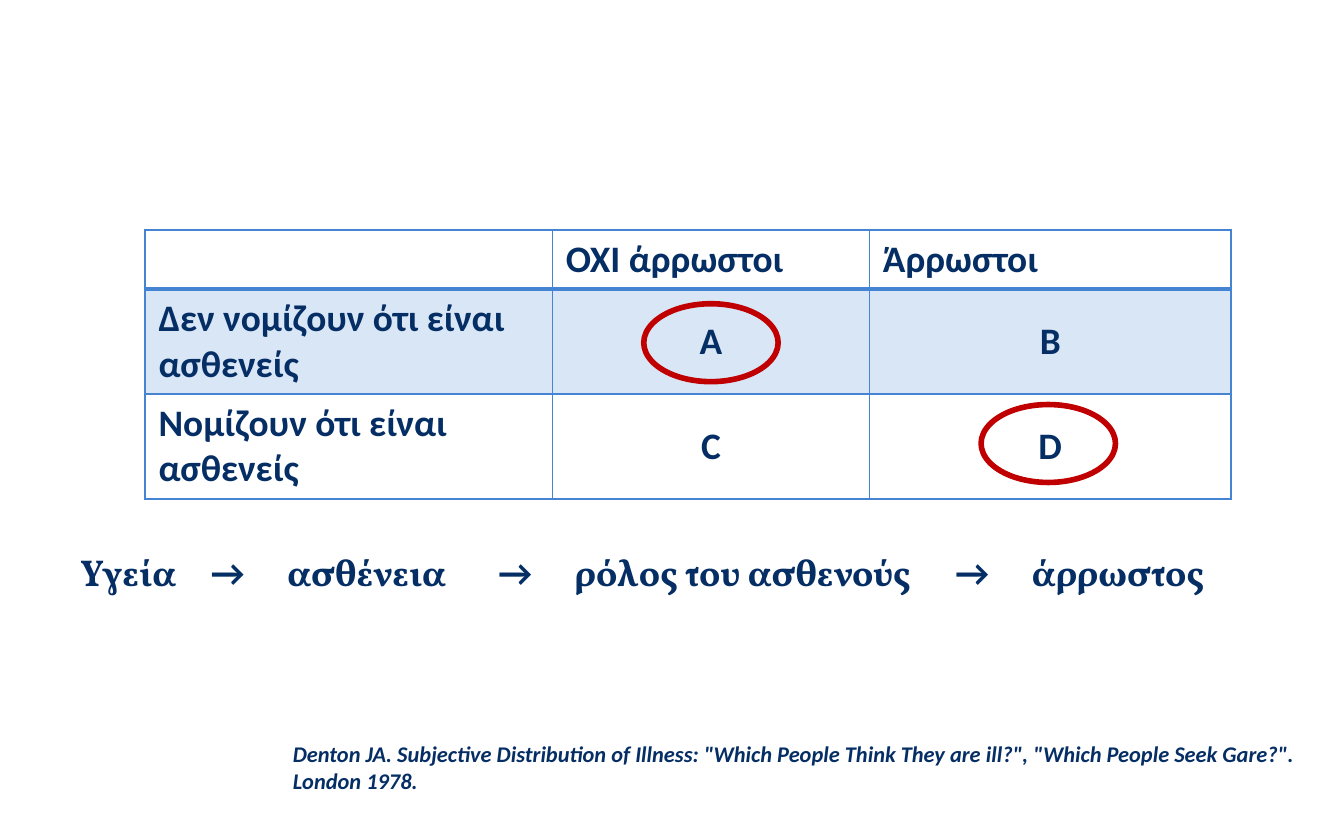
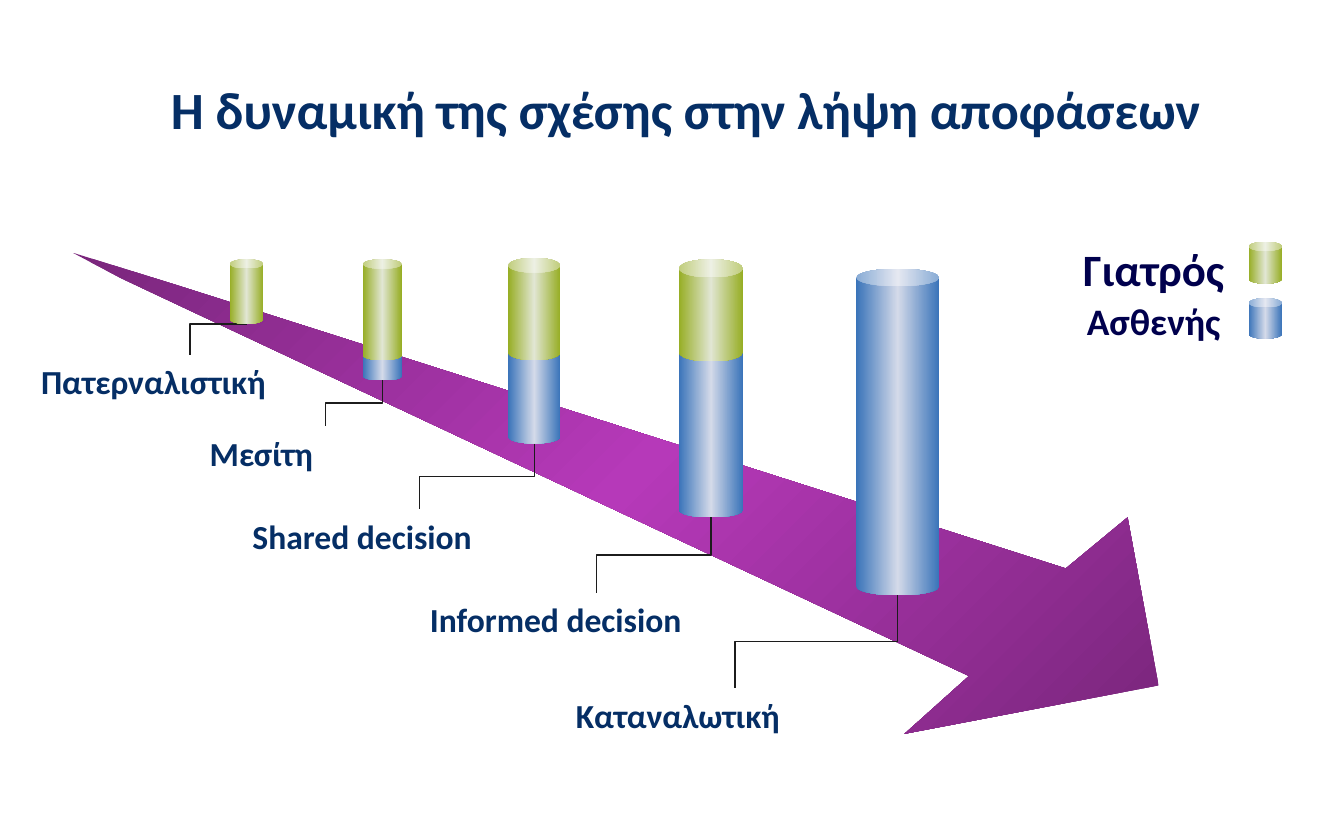
from dataclasses import dataclass

from lxml.etree import SubElement
from pptx import Presentation
from pptx.dml.color import RGBColor
from pptx.enum.shapes import MSO_CONNECTOR as Link, MSO_SHAPE as Preset
from pptx.enum.text import MSO_ANCHOR as Anchor, PP_ALIGN as Align
from pptx.oxml.ns import qn
from pptx.util import Emu, Inches, Pt

SLIDE_WIDTH, SLIDE_HEIGHT = Inches(10), Inches(6.25)
COLUMNS, ROWS = 100, 62.5


@dataclass(frozen=True)
class Theme:
    """Colours, fonts and type sizes shared by the slides."""
    ink: str = "052E65"
    legend: str = "00004D"
    grid: str = "4584D3"
    ring: str = "C00000"
    elbow: str = "1C1C1C"
    doctor: tuple = ("96AD23", "E1E6D3", "96AD23")
    patient: tuple = ("3973B9", "D4DAE9", "3973B9")
    arrow: tuple = ("7A267C", "B639B9", "7A267C")
    sans: str = "Calibri"
    serif: str = "Vollkorn"
    title: int = 28
    large: int = 24
    body: int = 20
    label: int = 18
    citation: int = 12


THEME = Theme()


@dataclass(frozen=True)
class Stage:
    """One model of the relationship; each can part is (top, height, cap)."""
    label: str
    label_box: tuple
    indent: float
    left: float
    width: float
    doctor: tuple = None
    patient: tuple = None

    @property
    def base(self):
        """Return the row where the stacked can ends."""
        top, height, _ = self.patient or self.doctor
        return top + height


STAGES = [
    Stage("Πατερναλιστική", (1.5, 26.4, 25.3, 4), 0.56, 17.1, 2.5,
          doctor=(19.3, 4.8, 0.27)),
    Stage("Μεσίτη", (14.1, 31.7, 20.2, 4), 0.5, 27, 2.9,
          (19.3, 7.5, 0.24), (26.2, 2.1, 0.27)),
    Stage("Shared decision", (17.8, 37.9, 26.8, 4), 0, 37.8, 3.9,
          (19.2, 7.6, 0.28), (25.2, 7.8, 0.25)),
    Stage("Informed decision", (31, 44.1, 26.8, 4), 0, 50.5, 4.8,
          (19.3, 7.6, 0.28), (25.2, 13.3, 0.22)),
    Stage("Καταναλωτική", (41.3, 51.2, 26.8, 4), 0.54, 63.7, 6.2,
          patient=(20, 24.3, 0.21)),
]
ARROW_OUTLINE = [(13.1, 21.2), (5.4, 18.8), (9, 20.7), (72.1, 50.3), (67.3, 54.6),
                 (86.2, 51), (83.9, 38.5), (79.3, 42.3), (13.1, 21.2)]
PERCEPTION = [
    [[], ["ΌΧΙ άρρωστοι"], ["Άρρωστοι"]],
    [["Δεν νομίζουν ότι είναι", "ασθενείς"], ["Α"], ["Β"]],
    [["Νομίζουν ότι είναι", "ασθενείς"], ["C"], ["D"]],
]
ILLNESS_STEPS = ["Υγεία", "ασθένεια", "ρόλος του ασθενούς", "άρρωστος"]
STEP_TABS = [9.7, 15.4, 31.1, 36.8, 65.1, 70.8]


def col(count):
    """Convert grid columns to a length."""
    return Emu(round(SLIDE_WIDTH * count / COLUMNS))


def row(count):
    """Convert grid rows to a length."""
    return Emu(round(SLIDE_HEIGHT * count / ROWS))


def place(box):
    """Convert a grid box to left, top, width and height."""
    left, top, width, height = box
    return col(left), row(top), col(width), row(height)


def add_words(paragraph, words, size, color=THEME.ink, font=THEME.sans, italic=False):
    """Append one bold run to a paragraph."""
    run = paragraph.add_run()
    run.text = words
    run.font.name, run.font.size = font, Pt(size)
    run.font.bold, run.font.italic = True, italic
    run.font.color.rgb = RGBColor.from_string(color)


def add_text_area(slide, box, align=Align.LEFT, anchor=Anchor.TOP):
    """Add a wrapping text box and return its frame and first paragraph."""
    frame = slide.shapes.add_textbox(*place(box)).text_frame
    frame.word_wrap = True
    frame.vertical_anchor = anchor
    frame.paragraphs[0].alignment = align
    return frame, frame.paragraphs[0]


def add_solid(parent, color, alpha=None):
    """Append a solid fill element, optionally translucent."""
    tone = SubElement(SubElement(parent, qn("a:solidFill")), qn("a:srgbClr"), val=color)
    if alpha is not None:
        SubElement(tone, qn("a:alpha"), val=str(alpha * 1000))


def fill_gradient(shape, colors, angle=0):
    """Fill an unlined, unshadowed shape with evenly spaced colours."""
    shape.shadow.inherit = False
    shape.line.fill.background()
    shape.fill.background()
    properties = shape.element.spPr
    plain = properties.find(qn("a:noFill"))
    gradient = SubElement(properties, qn("a:gradFill"), rotWithShape="1")
    stops = SubElement(gradient, qn("a:gsLst"))
    for index, color in enumerate(colors):
        position = round(100000 * index / (len(colors) - 1))
        stop = SubElement(stops, qn("a:gs"), pos=str(position))
        SubElement(stop, qn("a:srgbClr"), val=color)
    SubElement(gradient, qn("a:lin"), ang=str(angle * 60000), scaled="0")
    properties.replace(plain, gradient)


def add_can(slide, left, width, part, colors):
    """Add one can part with its cap ratio."""
    top, height, cap = part
    can = slide.shapes.add_shape(Preset.CAN, *place((left, top, width, height)))
    can.adjustments[0] = cap
    fill_gradient(can, colors)


def add_ring(slide, center, middle):
    """Add a hollow ellipse around a table answer."""
    ring = slide.shapes.add_shape(Preset.OVAL, *place((center - 5, middle - 2.9, 10, 5.8)))
    ring.shadow.inherit = False
    ring.fill.background()
    ring.line.color.rgb = RGBColor.from_string(THEME.ring)
    ring.line.width = Pt(3)


def add_elbow(slide, start, end, drops_first):
    """Add an elbow going down and left from a can to its label."""
    (x1, y1), (x2, y2) = start, end
    across, down = x1 - x2, y2 - y1
    width, height = (down, across) if drops_first else (across, down)
    left, top = (x1 + x2 - width) / 2, (y1 + y2 - height) / 2
    elbow = slide.shapes.add_connector(
        Link.ELBOW, col(left), row(top), col(left + width), row(top + height))
    elbow.line.color.rgb = RGBColor.from_string(THEME.elbow)
    elbow.line.width = Pt(0.75)
    properties = elbow.element.spPr
    SubElement(properties, qn("a:effectLst"))
    frame = properties.find(qn("a:xfrm"))
    if drops_first:
        frame.set("rot", str(90 * 60000))
    else:
        frame.set("rot", str(180 * 60000))
        frame.set("flipV", "1")
        properties.find(qn("a:prstGeom")).set("prst", "bentConnector2")


def style_cell(cell, header, shaded):
    """Set the borders and fill of a table cell."""
    properties = cell._tc.get_or_add_tcPr()
    below_header = {"a:lnB": 2} if header else {"a:lnT": 2} if shaded else {}
    for side in ("a:lnL", "a:lnR", "a:lnT", "a:lnB"):
        width = Pt(below_header.get(side, 1))
        add_solid(SubElement(properties, qn(side), w=str(width)), THEME.grid)
    if shaded:
        add_solid(properties, THEME.grid, alpha=20)
    else:
        cell.fill.background()


def add_perception_table(slide):
    """Add the table of perceived against actual illness."""
    box = place((10.8, 17.1, 80.8, 19.7))
    table = slide.shapes.add_table(3, 3, *box).table
    table.first_row = table.horz_banding = False
    for column, width in zip(table.columns, (30.3, 23.6, 26.9)):
        column.width = col(width)
    for line, height in zip(table.rows, (4.1, 7.8, 7.8)):
        line.height = row(height)
    for r, answers in enumerate(PERCEPTION):
        for c, lines in enumerate(answers):
            cell = table.cell(r, c)
            style_cell(cell, header=r == 0, shaded=r == 1)
            is_answer = r > 0 and c > 0
            if is_answer:
                cell.vertical_anchor = Anchor.MIDDLE
            for index, words in enumerate(lines):
                frame = cell.text_frame
                paragraph = frame.add_paragraph() if index else frame.paragraphs[0]
                if is_answer:
                    paragraph.alignment = Align.CENTER
                add_words(paragraph, words, THEME.body)


def add_illness_path(slide):
    """Add the tabbed line of steps from health to patient."""
    _, steps = add_text_area(slide, (5, 40.4, 90.8, 4.4))
    tabs = SubElement(steps._p.get_or_add_pPr(), qn("a:tabLst"))
    for stop in STEP_TABS:
        SubElement(tabs, qn("a:tab"), pos=str(col(stop)), algn="l")
    for index, step in enumerate(ILLNESS_STEPS):
        if index:
            add_words(steps, "\t→\t", THEME.body)
        add_words(steps, step, THEME.body, font=THEME.serif)


def add_legend_entry(slide, words, top, size, part, colors):
    """Add a legend name with its sample can."""
    frame, name = add_text_area(slide, (79.5, top, 13.4, 4.7), Align.CENTER)
    frame.margin_right = col(1.7)
    add_words(name, words, size, THEME.legend)
    add_can(slide, 92.9, 2.5, part, colors)


def add_stage_label(slide, stage):
    """Add the label of a stage and the elbow leading to it."""
    frame, name = add_text_area(slide, stage.label_box)
    frame.margin_left = col(1 + stage.indent)
    add_words(name, stage.label, THEME.label)
    left, top, width, _ = stage.label_box
    start = stage.left + stage.width / 2, stage.base
    add_elbow(slide, start, (left + width / 2, top), stage.patient is not None)


def build_perception(slide):
    """Build the slide on perceived and actual illness."""
    add_perception_table(slide)
    _, source = add_text_area(slide, (20.8, 54.6, 77.5, 7.7))
    add_words(source, 'Denton JA. Subjective Distribution of Illness: "Which People Think '
              'They are ill?", "Which People Seek Gare?". London 1978.',
              THEME.citation, italic=True)
    add_illness_path(slide)
    add_ring(slide, 78, 33)
    add_ring(slide, 52.9, 25.5)


def build_decisions(slide):
    """Build the slide on the dynamics of decision making."""
    _, title = add_text_area(slide, (10, 2.9, 82, 10.4), Align.CENTER, Anchor.MIDDLE)
    add_words(title, "Η δυναμική της σχέσης στην λήψη αποφάσεων", THEME.title)
    outline = [(col(x), row(y)) for x, y in ARROW_OUTLINE]
    builder = slide.shapes.build_freeform(*outline[0])
    builder.add_line_segments(outline[1:], close=True)
    fill_gradient(builder.convert_to_shape(), THEME.arrow, angle=45)
    for stage in STAGES:
        if stage.patient:
            add_can(slide, stage.left, stage.width, stage.patient, THEME.patient)
    for stage in STAGES:
        add_stage_label(slide, stage)
        if stage.doctor:
            add_can(slide, stage.left, stage.width, stage.doctor, THEME.doctor)
    add_legend_entry(slide, "Γιατρός", 17.5, THEME.large, (18, 3.1, 0.27), THEME.doctor)
    add_legend_entry(slide, "Ασθενής", 21.7, THEME.body, (22.2, 3, 0.27), THEME.patient)


def main():
    """Create the presentation and save it."""
    deck = Presentation()
    deck.slide_width, deck.slide_height = SLIDE_WIDTH, SLIDE_HEIGHT
    blank = deck.slide_layouts[6]
    for build in (build_perception, build_decisions):
        build(deck.slides.add_slide(blank))
    deck.save("out.pptx")


if __name__ == "__main__":
    main()
